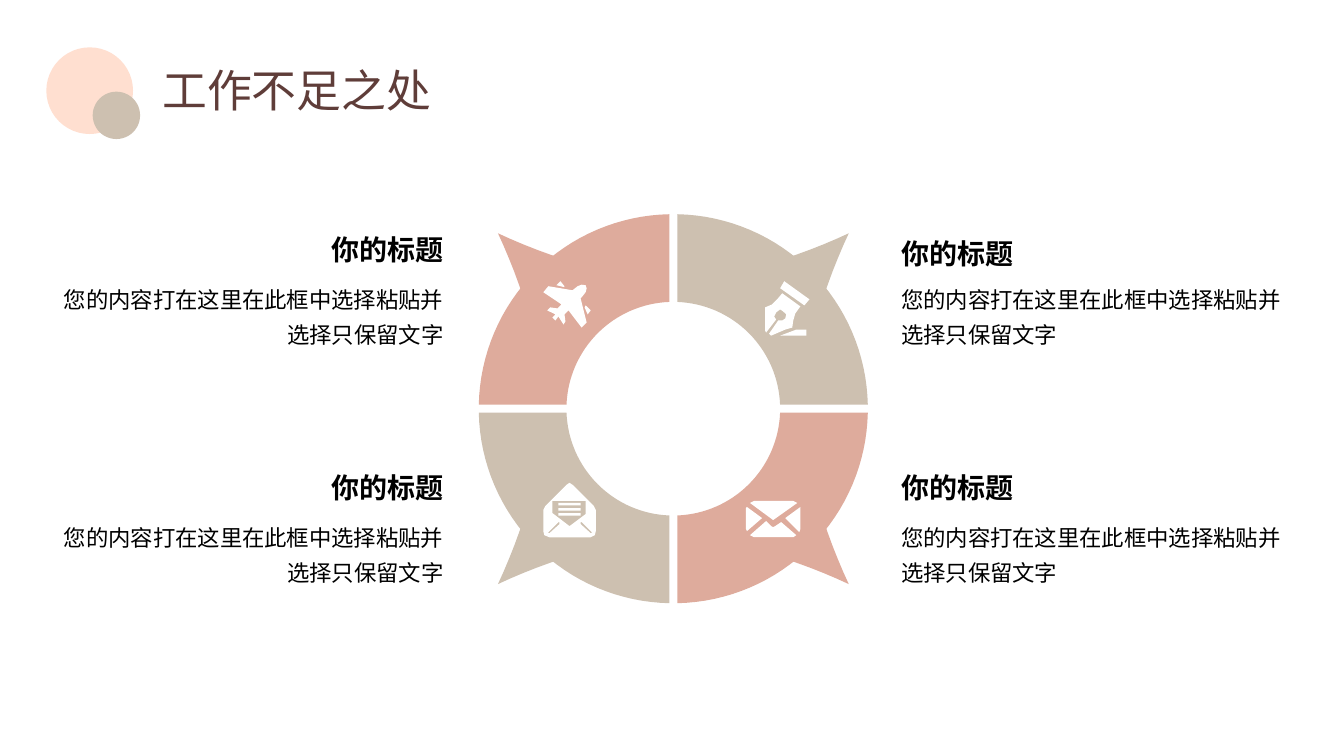
from dataclasses import dataclass
from math import acos, asin, cos, pi, sin

from lxml import etree
from pptx import Presentation
from pptx import util as u
from pptx.dml.color import RGBColor
from pptx.enum import shapes, text
from pptx.oxml.ns import qn


@dataclass(frozen=True)
class Theme:
    font: str = "Noto Sans CJK SC"
    peach: str = "FFDFD0"
    sand: str = "CDC0B0"
    rose: str = "DEAB9C"
    white: str = "FFFFFF"
    brown: str = "5F3D39"
    black: str = "000000"
    title_size: int = 32
    heading_size: int = 20
    body_size: int = 16


THEME = Theme()
COLUMNS, ROWS = 133.33, 75  # one grid cell is a tenth of an inch square
CENTRE = (66.8, 40.55)
OUTER, INNER, HALF_GAP = 19.3, 10.6, 0.4
ARC_STEPS, CURVE_STEPS = 32, 12
# One side of the pointer, as Bezier controls from its tip to its barb.
POINTER_SIDE = [(17.4, 17.4), (15.2, 12.7), (13.0, 6.1), (12.8, 1.1)]
POINTER_NOTCH = (9.0, 9.0)

# Icon outlines, in hundredths of an inch from the icon's top left corner.
PLANE = [
    [(42, 4), (43, 7), (42, 11), (38, 16), (37, 17), (43, 41), (38, 46), (25, 29),
     (21, 33), (22, 40), (20, 43), (15, 35), (12, 39), (9, 36), (12, 33), (4, 29),
     (7, 26), (14, 27), (18, 23), (0, 11), (5, 5), (29, 9), (34, 5), (38, 3.5)],
    [(47, 29), (42, 24), (41, 26), (44, 33)],
    [(17, 0), (13, 4), (21, 6), (21, 5)],
]
PEN = [
    [(1, 51), (0, 49), (0, 26), (7, 23), (12, 18), (17, 12), (35, 25), (30, 32),
     (28, 39), (27, 46), (20, 48), (6, 54), (4, 52), (13, 39), (17, 39), (20, 37),
     (21, 33), (18, 30), (15, 28), (11, 31), (9, 35), (11, 38)],
    [(15, 54), (41, 54), (41, 48), (31, 48)],
    [(39, 24), (44, 18), (19, 0), (15, 7)],
]
ENVELOPE = [
    [(8, 0), (47, 0), (51, 2), (27, 19), (4, 2)],
    [(54, 6), (39, 17), (53, 31), (54, 28)],
    [(47, 36), (8, 36), (4, 34), (20, 20), (25, 25), (27, 26), (29, 25), (35, 21),
     (50, 34)],
    [(1, 30), (16, 17), (1, 6), (0, 7), (0, 28)],
]
SLIT = [(6, 50), (16, 41), (16, 39), (15, 39), (5, 49), (5, 50)]
OPEN_LETTER = [
    [(50, 23), (52, 27), (52, 48), (51, 52), (47, 54), (6, 54), (1, 52), (0, 48),
     (0, 27), (2, 23), (23, 2), (26, 0), (29, 2)],
    [(9, 18), (9, 30), (26, 43), (42, 31), (42, 18)],
    *[[(15, y), (15, y + 2.5), (37, y + 2.5), (37, y)] for y in (20, 25, 30)],
    SLIT,
    [(53 - x, y) for x, y in SLIT],
]


def arc(radius):
    """Quarter arc around (0, 0), trimmed by the gap at both ends."""
    start, end = asin(HALF_GAP / radius), acos(HALF_GAP / radius)
    angles = [start + (end - start) * i / ARC_STEPS for i in range(ARC_STEPS + 1)]
    return [(radius * cos(a), radius * sin(a)) for a in angles]


def bezier(controls):
    points = []
    for i in range(CURVE_STEPS + 1):
        t = i / CURVE_STEPS
        weights = ((1 - t) ** 3, 3 * t * (1 - t) ** 2, 3 * t * t * (1 - t), t ** 3)
        points.append(tuple(sum(w * c[axis] for w, c in zip(weights, controls))
                            for axis in (0, 1)))
    return points


def write(shape, words, size, color, bold=False, align=text.PP_ALIGN.LEFT,
          spacing=1.0, anchor=text.MSO_ANCHOR.TOP):
    frame = shape.text_frame
    frame.word_wrap = True
    frame.auto_size = text.MSO_AUTO_SIZE.NONE
    frame.vertical_anchor = anchor
    paragraph = frame.paragraphs[0]
    paragraph.alignment = align
    paragraph.line_spacing = spacing
    run = paragraph.add_run()
    run.text = words
    run.font.size = u.Pt(size)
    run.font.bold = bold
    run.font.color.rgb = RGBColor.from_string(color)
    run.font.name = THEME.font
    east_asian = etree.SubElement(run.font._element, qn("a:ea"))
    east_asian.set("typeface", THEME.font)


class Deck:
    """Holds the style, the grid and the current slide."""

    def __init__(self, theme):
        self.theme = theme
        self.presentation = Presentation()
        self.presentation.slide_width = u.Inches(13.33)
        self.presentation.slide_height = u.Inches(7.5)
        self.column = self.presentation.slide_width / COLUMNS
        self.row = self.presentation.slide_height / ROWS
        layout = self.presentation.slide_layouts.get_by_name("Title Only")
        self.slide = self.presentation.slides.add_slide(layout)

    def at(self, x, y):
        return round(x * self.column), round(y * self.row)

    def paint(self, shape, color):
        shape.shadow.inherit = False
        shape.fill.solid()
        shape.fill.fore_color.rgb = RGBColor.from_string(color)
        shape.line.fill.background()

    def title(self, words, x, y, width, height):
        title = self.slide.shapes.title
        title.left, title.top = self.at(x, y)
        title.width, title.height = self.at(width, height)
        write(title, words, self.theme.title_size, self.theme.brown,
              spacing=0.9, anchor=text.MSO_ANCHOR.MIDDLE)

    def circle(self, x, y, diameter, color):
        circle = self.slide.shapes.add_shape(
            shapes.MSO_SHAPE.OVAL, *self.at(x, y), *self.at(diameter, diameter))
        self.paint(circle, color)

    def outline(self, contours, color, origin, scale_x=1, scale_y=1):
        """Fill closed contours, scaled and moved to origin on the grid."""
        placed = [[self.at(origin[0] + x * scale_x, origin[1] + y * scale_y)
                   for x, y in contour] for contour in contours]
        builder = self.slide.shapes.build_freeform(*placed[0][0])
        for contour in placed:
            if contour is not placed[0]:
                builder.move_to(*contour[0])
            builder.add_line_segments(contour[1:], close=True)
        self.paint(builder.convert_to_shape(), color)

    def segment(self, side_x, side_y, color):
        """Ring quarter with its pointer; sides are -1 or 1 from the centre."""
        ring = arc(OUTER) + arc(INNER)[::-1]
        side = bezier(POINTER_SIDE)
        pointer = side + [POINTER_NOTCH] + [(y, x) for x, y in side[:0:-1]]
        for contour in (ring, pointer):
            self.outline([contour], color, CENTRE, side_x, side_y)

    def icon(self, contours, x, y):
        self.outline(contours, self.theme.white, (x, y), 0.1, 0.1)

    def text_box(self, words, x, y, width, height, **style):
        box = self.slide.shapes.add_textbox(*self.at(x, y), *self.at(width, height))
        write(box, words, color=self.theme.black, **style)

    def entry(self, heading, body, side_x, heading_y, body_y):
        right = side_x > 0
        align = text.PP_ALIGN.LEFT if right else text.PP_ALIGN.RIGHT
        self.text_box(heading, 88.4 if right else 26.7, heading_y, 18.3, 5.5,
                      size=self.theme.heading_size, bold=True, align=align, spacing=1.5)
        self.text_box(body, 88.4 if right else 4.8, body_y, 40.2, 7.7,
                      size=self.theme.body_size, align=align, spacing=1.3)


def main():
    deck = Deck(THEME)
    deck.circle(4.6, 4.7, 8.6, THEME.peach)
    deck.circle(9.2, 9.1, 4.7, THEME.sand)
    deck.title("工作不足之处", 15.1, 5.4, 115, 7.6)
    # side_x, side_y, colour, icon, icon x, icon y, heading y, body y
    quarters = [
        (1, 1, THEME.rose, ENVELOPE, 74, 49.7, 44.5, 50.7),
        (-1, 1, THEME.sand, OPEN_LETTER, 53.9, 47.9, 44.5, 50.7),
        (-1, -1, THEME.rose, PLANE, 53.9, 27.9, 20.9, 27.1),
        (1, -1, THEME.sand, PEN, 75.9, 27.9, 21.3, 27.1),
    ]
    for side_x, side_y, color, icon, icon_x, icon_y, heading_y, body_y in quarters:
        deck.segment(side_x, side_y, color)
        deck.icon(icon, icon_x, icon_y)
        deck.entry("你的标题", "您的内容打在这里在此框中选择粘贴并选择只保留文字",
                   side_x, heading_y, body_y)
    deck.presentation.save("out.pptx")


if __name__ == "__main__":
    main()
